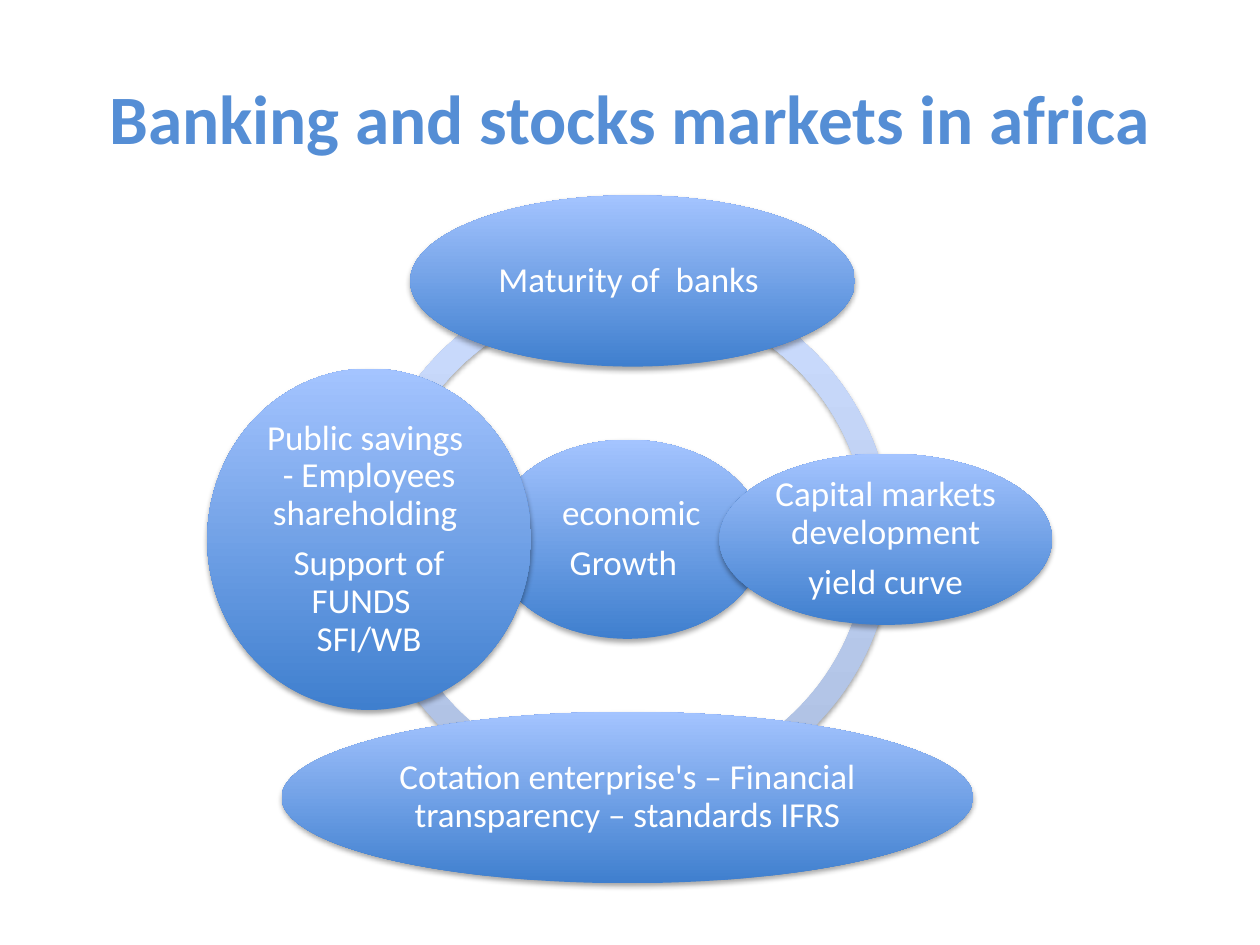
from dataclasses import dataclass

from lxml import etree
from pptx import Presentation
from pptx import util as u
from pptx.dml.color import RGBColor
from pptx.enum import shapes, text
from pptx.oxml.ns import qn

SLIDE_WIDTH, SLIDE_HEIGHT = 10, 7.5
CENTRE_X, CENTRE_Y, STEP = 4.98, 4.28, 2.05
RING_SIZE = 4.2
RING_THICKNESS = 0.046
QUARTER = 54
FONT = "Calibri"


@dataclass
class Bubble:
    """An ellipse placed by column and row steps from the ring's centre."""

    column: float
    row: float
    width: float
    height: float
    paragraphs: list[str]


BUBBLES = [
    Bubble(0, 0, 2.17, 1.58, [" economic", "Growth "]),
    Bubble(0.02, -1, 3.53, 1.36, ["Maturity of  banks "]),
    Bubble(1, 0, 2.64, 1.36, ["Capital markets development", " yield curve "]),
    Bubble(0, 1, 5.49, 1.36,
           ["Cotation enterprise's – Financial transparency – standards IFRS"]),
    Bubble(-1, 0, 2.57, 2.71,
           ["Public savings  - Employees shareholding ", "Support of FUNDS   SFI/WB"]),
]


def colour(value: str) -> RGBColor:
    """Turn a hex string into a colour."""
    return RGBColor.from_string(value)


def add_shadow(shape) -> None:
    """Give the shape a soft shadow straight below it."""
    shape.shadow.inherit = False
    effects = shape._element.spPr.find(qn("a:effectLst"))
    shadow = etree.SubElement(effects, qn("a:outerShdw"), blurRad=str(u.Pt(3.1)),
                              dist=str(u.Pt(1.8)), dir="5400000", rotWithShape="0")
    black = etree.SubElement(shadow, qn("a:srgbClr"), val="000000")
    etree.SubElement(black, qn("a:alpha"), val="35000")


def add_centred(slide, kind, x: float, y: float, width: float, height: float,
                bottom: str, top: str):
    """Add a borderless shape around a point with a bottom-to-top gradient."""
    shape = slide.shapes.add_shape(kind, u.Inches(x - width / 2), u.Inches(y - height / 2),
                                   u.Inches(width), u.Inches(height))
    shape.fill.gradient()
    shape.fill.gradient_angle = 90
    for stop, value in zip(shape.fill.gradient_stops, (bottom, top)):
        stop.color.rgb = colour(value)
    shape.line.fill.background()
    add_shadow(shape)
    return shape


def write(shape, paragraphs: list[str], size: float, value: str, bold: bool = False) -> None:
    """Write centred paragraphs in one font, size and colour."""
    frame = shape.text_frame
    frame.word_wrap = True
    frame.vertical_anchor = text.MSO_ANCHOR.MIDDLE
    frame.text = "\n".join(paragraphs)
    for paragraph in frame.paragraphs:
        paragraph.alignment = text.PP_ALIGN.CENTER
        for run in paragraph.runs:
            run.font.name, run.font.size, run.font.bold = FONT, u.Pt(size), bold
            run.font.color.rgb = colour(value)


def add_title(slide, title: str) -> None:
    """Add the slide title across the top."""
    box = slide.shapes.add_textbox(
        u.Inches(0.05 * SLIDE_WIDTH), u.Inches(0.04 * SLIDE_HEIGHT),
        u.Inches(0.9 * SLIDE_WIDTH), u.Inches(1.25))
    write(box, [title], 39.6, "558ED5", bold=True)


def add_ring(slide) -> None:
    """Add the four quarter arcs behind the bubbles."""
    for quarter in (2, 1, 0, 3):
        arc = add_centred(slide, shapes.MSO_SHAPE.BLOCK_ARC, CENTRE_X, CENTRE_Y,
                          RING_SIZE, RING_SIZE, "ADBFE1", "CCDDFF")
        arc.adjustments[0] = quarter * QUARTER
        arc.adjustments[1] = (quarter + 1) % 4 * QUARTER
        arc.adjustments[2] = RING_THICKNESS


def add_bubble(slide, bubble: Bubble) -> None:
    """Add one labelled ellipse."""
    shape = add_centred(slide, shapes.MSO_SHAPE.OVAL, CENTRE_X + bubble.column * STEP,
                        CENTRE_Y + bubble.row * STEP, bubble.width, bubble.height,
                        "3F7FCE", "A4C4FF")
    write(shape, bubble.paragraphs, 20, "FFFFFF")
    frame = shape.text_frame
    frame.margin_left = frame.margin_right = u.Inches(0.03)
    frame.margin_top = frame.margin_bottom = u.Inches(0.03)
    for paragraph in frame.paragraphs:
        paragraph.line_spacing = 0.9
        paragraph.space_after = u.Pt(7)


def main() -> None:
    """Build and save the slide."""
    presentation = Presentation()
    presentation.slide_width = u.Inches(SLIDE_WIDTH)
    presentation.slide_height = u.Inches(SLIDE_HEIGHT)
    slide = presentation.slides.add_slide(presentation.slide_layouts[6])
    add_title(slide, "Banking and stocks markets in africa")
    add_ring(slide)
    for bubble in BUBBLES:
        add_bubble(slide, bubble)
    presentation.save("out.pptx")


if __name__ == "__main__":
    main()
